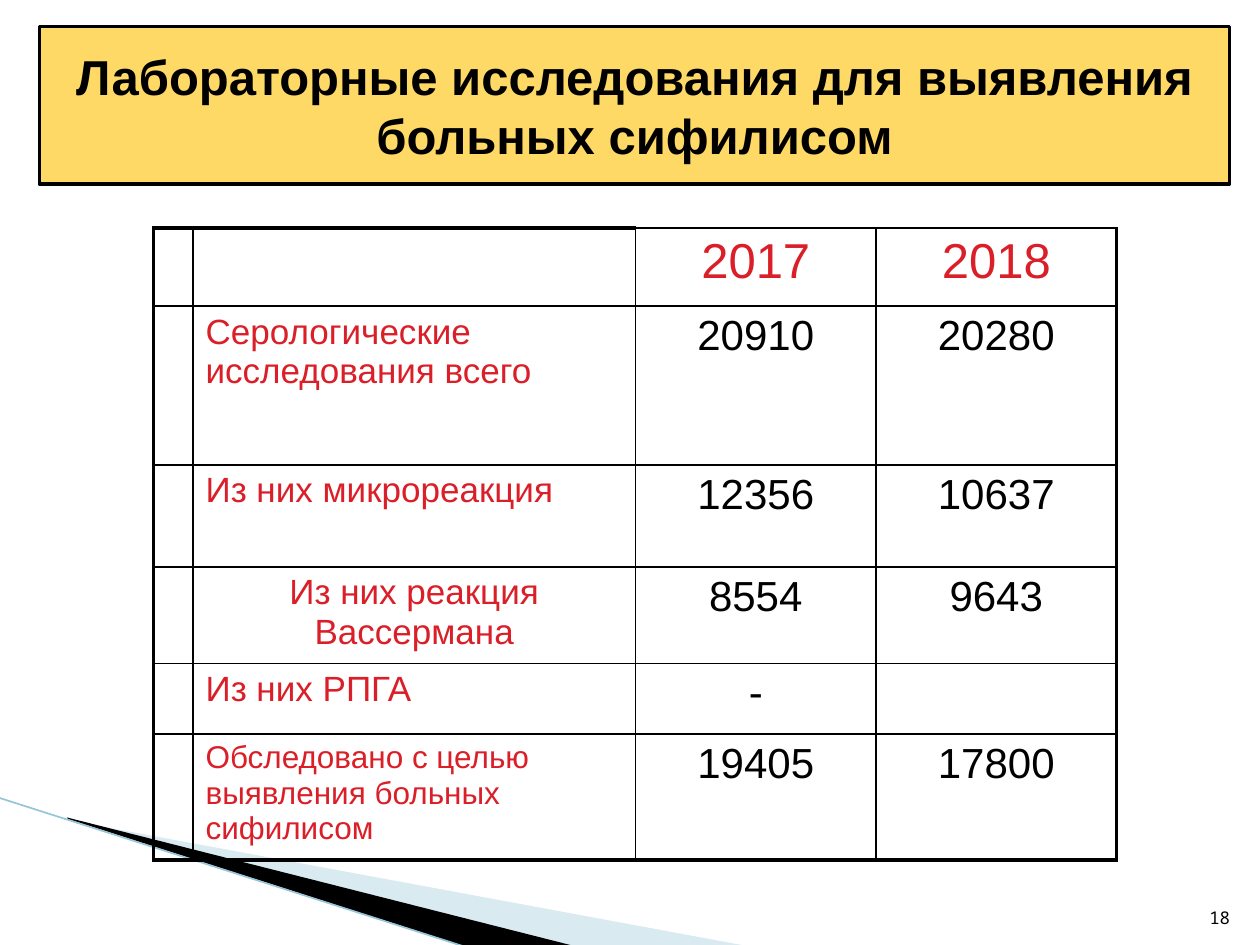
from dataclasses import dataclass

from pptx import Presentation
from pptx import util as u
from pptx.dml.color import RGBColor
from pptx.enum import shapes, text
from pptx.oxml.ns import qn
from lxml import etree

COLORS = {"black": "000000", "gold": "FFC000", "red": "DA1F28",
          "pale_blue": "A0CBDC", "line_blue": "97C5D8"}
FONT = "Arial"
THIN, THICK = 1, 2.25
CENTER, LEFT, RIGHT = text.PP_ALIGN.CENTER, text.PP_ALIGN.LEFT, text.PP_ALIGN.RIGHT


@dataclass
class Wedge:
    points: list[tuple[float, float]]
    color: str
    opacity: int = 100


@dataclass
class Row:
    height: float
    label: str
    counts: tuple[str, str]
    label_size: int = 20
    label_align: text.PP_ALIGN = LEFT
    count_size: int = 24
    count_color: str = "black"


WEDGES = [
    Wedge([(1.4, 16.54), (15.11, 19.08), (11.58, 19.08), (1.4, 16.51)], "pale_blue", 40),
    Wedge([(1.35, 16.48), (11.61, 19.08), (9.45, 19.1), (1.37, 16.51)], "black"),
]
COLUMN_WIDTHS = [0.79, 8.92, 4.85, 4.85]
ROWS = [
    Row(1.57, "", ("2017", "2018"), count_size=28, count_color="red"),
    Row(3.2, "Серологические исследования всего", ("20910", "20280")),
    Row(2.06, "Из них микрореакция", ("12356", "10637")),
    Row(1.85, "Из них реакция Вассермана", ("8554", "9643"), label_align=CENTER),
    Row(1.42, "Из них РПГА", ("-", "")),
    Row(2.41, "Обследовано с целью выявления больных сифилисом",
        ("19405", "17800"), label_size=18),
]


def rgb(name: str) -> RGBColor:
    return RGBColor.from_string(COLORS[name])


def set_opacity(shape, percent: int) -> None:
    color = shape._element.spPr.find(qn("a:solidFill"))[0]
    etree.SubElement(color, qn("a:alpha"), val=str(percent * 1000))


def write(frame, words: str, size: float, color: str, align,
          font: str = FONT, bold: bool = False) -> None:
    paragraph = frame.paragraphs[0]
    paragraph.alignment = align
    run = paragraph.add_run()
    run.text = words
    run.font.name, run.font.size, run.font.bold = font, u.Pt(size), bold
    run.font.color.rgb = rgb(color)


def draw_wedge(slide, wedge: Wedge) -> None:
    corners = [(u.Cm(x), u.Cm(y)) for x, y in wedge.points]
    builder = slide.shapes.build_freeform(*corners[0])
    builder.add_line_segments(corners[1:], close=True)
    shape = builder.convert_to_shape()
    shape.shadow.inherit = False
    shape.fill.solid()
    shape.fill.fore_color.rgb = rgb(wedge.color)
    shape.line.fill.background()
    if wedge.opacity < 100:
        set_opacity(shape, wedge.opacity)


def set_borders(cell, widths: dict[str, float]) -> None:
    properties = cell._tc.get_or_add_tcPr()
    for position, (side, width) in enumerate(widths.items()):
        border = etree.Element(qn(f"a:ln{side}"), w=str(u.Pt(width)))
        fill = etree.SubElement(border, qn("a:solidFill"))
        etree.SubElement(fill, qn("a:srgbClr"), val=COLORS["black"])
        properties.insert(position, border)


def draw_table(slide) -> None:
    last_row, last_column = len(ROWS) - 1, len(COLUMN_WIDTHS) - 1
    table = slide.shapes.add_table(
        len(ROWS), len(COLUMN_WIDTHS), u.Cm(3.1), u.Cm(4.6),
        u.Cm(sum(COLUMN_WIDTHS)), u.Cm(sum(row.height for row in ROWS))).table
    table.first_row = table.horz_banding = False
    for column, width in zip(table.columns, COLUMN_WIDTHS):
        column.width = u.Cm(width)

    for r, row in enumerate(ROWS):
        table.rows[r].height = u.Cm(row.height)
        for c, words in enumerate(("", row.label, *row.counts)):
            cell = table.cell(r, c)
            cell.fill.background()
            # Heavy outer frame, except above the year headings
            set_borders(cell, {
                "L": THICK if c == 0 else THIN,
                "R": THICK if c == last_column else THIN,
                "T": THICK if r == 0 and c < 2 else THIN,
                "B": THICK if r == last_row else THIN,
            })
            if not words:
                continue
            if c == 1:
                write(cell.text_frame, words, row.label_size, "red", row.label_align)
            else:
                write(cell.text_frame, words, row.count_size, row.count_color, CENTER)


def draw_title(slide) -> None:
    title = slide.shapes.title
    title.left, title.top = u.Cm(0.79), u.Cm(0.53)
    title.width, title.height = u.Cm(24), u.Cm(3.18)
    title.fill.solid()
    title.fill.fore_color.rgb = rgb("gold")
    set_opacity(title, 60)
    title.line.color.rgb = rgb("black")
    title.line.width = u.Pt(1.75)
    title.text_frame.auto_size = text.MSO_AUTO_SIZE.NONE
    title.text_frame.vertical_anchor = text.MSO_ANCHOR.MIDDLE
    write(title.text_frame, "Лабораторные исследования для выявления больных сифилисом",
          28, "black", CENTER, bold=True)


def main() -> None:
    deck = Presentation()
    deck.slide_width, deck.slide_height = u.Cm(25.4), u.Cm(19.05)
    slide = deck.slides.add_slide(deck.slide_layouts[5])

    # Corner decoration
    for wedge in WEDGES:
        draw_wedge(slide, wedge)
    edge = slide.shapes.add_connector(shapes.MSO_CONNECTOR.STRAIGHT,
                                      u.Cm(-0.03), u.Cm(16.08), u.Cm(9.42), u.Cm(19.1))
    edge.line.color.rgb = rgb("line_blue")
    edge.line.width = u.Pt(0.95)
    etree.SubElement(edge._element.spPr, qn("a:effectLst"))

    draw_title(slide)

    # Page number
    number = slide.shapes.add_textbox(u.Cm(24.03), u.Cm(17.81), u.Cm(1.02), u.Cm(1.02))
    number.text_frame.word_wrap = True
    number.text_frame.vertical_anchor = text.MSO_ANCHOR.BOTTOM
    write(number.text_frame, "18", 10, "black", RIGHT, font="Noto Sans Mono")

    draw_table(slide)
    deck.save("out.pptx")


if __name__ == "__main__":
    main()
